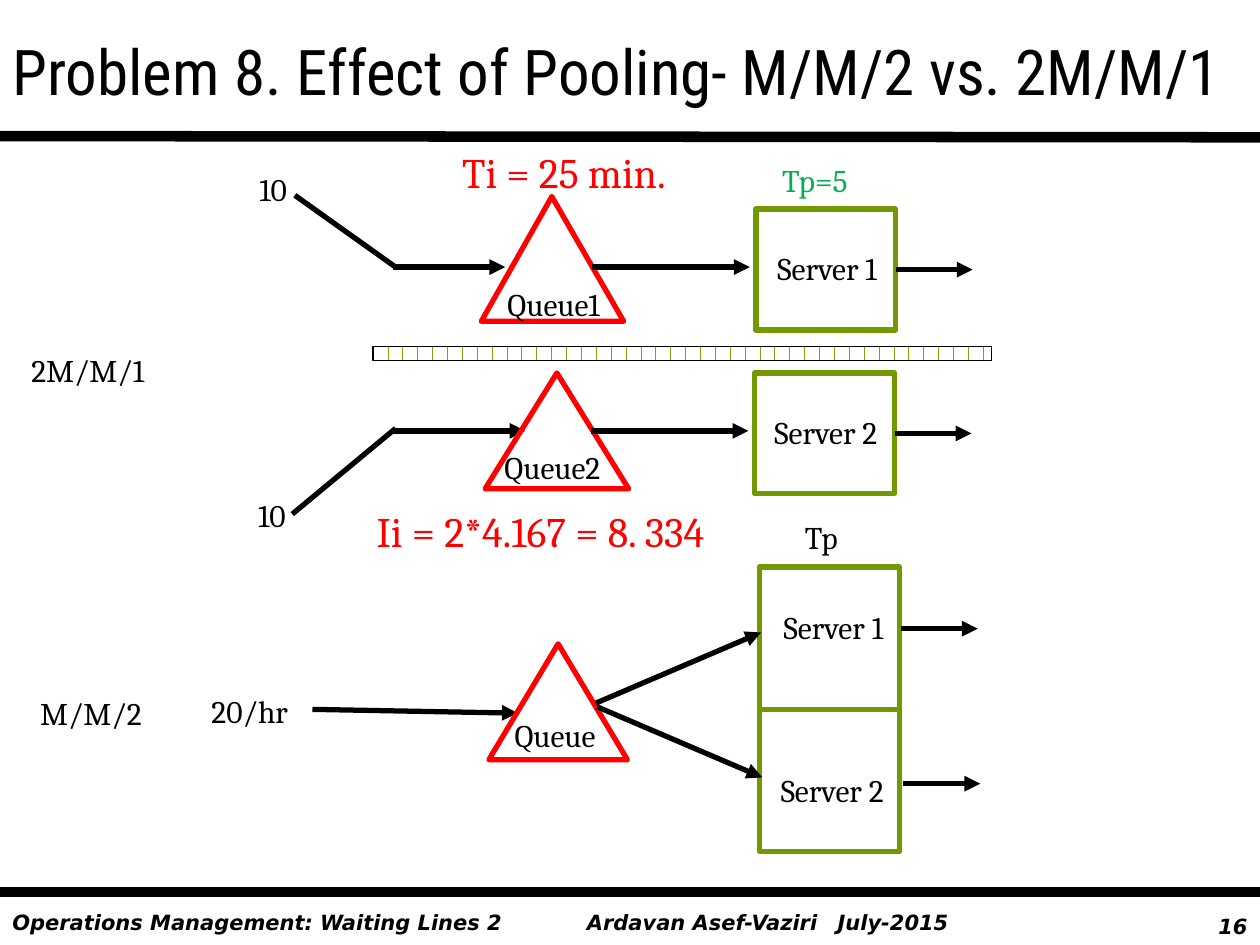
from pptx import Presentation
from pptx.dml.color import RGBColor
from pptx.enum.dml import MSO_PATTERN as Pattern
from pptx.enum.shapes import MSO_CONNECTOR as Connector, MSO_SHAPE as Shape
from pptx.enum.text import MSO_ANCHOR as Anchor, MSO_AUTO_SIZE as AutoSize, PP_ALIGN as Align
from pptx.oxml.ns import qn
from pptx.oxml.xmlchemy import OxmlElement
from pptx.util import Pt

PX = 9144  # 100 px to the inch
BLACK, RED, GREEN, OLIVE = "000000", "FF0000", "00B050", "739900"
LABEL_HEIGHT = 40


def color(value):
    return RGBColor.from_string(value)


def add_text(page, box, text, size=18, font="Cambria", fill=BLACK, bold=False,
             italic=False, align=Align.LEFT, anchor=Anchor.TOP, wrap=False,
             grow=True, spacing=None, tab=None):
    frame = page.shapes.add_textbox(*(n * PX for n in box)).text_frame
    frame.word_wrap = wrap
    frame.auto_size = AutoSize.SHAPE_TO_FIT_TEXT if grow else AutoSize.NONE
    frame.vertical_anchor = anchor
    para = frame.paragraphs[0]
    para.alignment = align
    if spacing:
        para.line_spacing = spacing
    if tab:
        stops = OxmlElement("a:tabLst")
        stop = OxmlElement("a:tab")
        stop.set("pos", str(tab * PX))
        stop.set("algn", "l")
        stops.append(stop)
        para._p.get_or_add_pPr().append(stops)
    span = para.add_run()
    span.text = text
    span.font.size = Pt(size)
    span.font.name = font
    span.font.bold = bold
    span.font.italic = italic
    span.font.color.rgb = color(fill)


def add_line(page, start, end, stroke=BLACK, width=3, arrow=False):
    line = page.shapes.add_connector(
        Connector.STRAIGHT, *(n * PX for n in (*start, *end)))
    line.line.color.rgb = color(stroke)
    line.line.width = Pt(width)
    properties = line.element.spPr
    if arrow:
        tail = OxmlElement("a:tailEnd")
        tail.set("type", "triangle")
        properties.find(qn("a:ln")).append(tail)
    properties.append(OxmlElement("a:effectLst"))
    return line


def outline(shape, stroke, width=3):
    shape.shadow.inherit = False
    shape.fill.background()
    shape.line.color.rgb = color(stroke)
    shape.line.width = Pt(width)
    return shape


def add_rect(page, box, stroke, width=3):
    rect = page.shapes.add_shape(Shape.RECTANGLE, *(n * PX for n in box))
    return outline(rect, stroke, width)


def add_queue(page, box):
    left, top, width, height = box
    bottom = top + height
    builder = page.shapes.build_freeform(left, bottom, scale=PX)
    builder.add_line_segments([(left + width // 2, top), (left + width, bottom)])
    outline(builder.convert_to_shape(), RED)


def add_label(page, left, top, width, text):
    add_text(page, (left, top, width, LABEL_HEIGHT), text, align=Align.CENTER)


def add_frame(page, width, height):
    """Title, rules and footer."""
    footer = dict(size=12, font="DejaVu Sans", bold=True, italic=True, wrap=True)
    foot = height - 33
    add_text(page, (width - 75, height - 30, 75, 30), "16", align=Align.RIGHT, **footer)
    add_text(page, (456, foot, 335, 30), "Ardavan Asef-Vaziri\tJuly-2015", tab=199, **footer)
    add_text(page, (0, foot, 467, 30), "Operations Management: Waiting Lines 2", **footer)
    add_line(page, (0, 108), (width, 109), width=6)
    add_line(page, (0, height - 42), (width, height - 42), width=6)
    add_text(page, (0, 0, width, 111), "Problem 8. Effect of Pooling- M/M/2 vs. 2M/M/1",
             size=36, font="Roboto Condensed", anchor=Anchor.MIDDLE, wrap=True, grow=False)


def add_lane(page, left, top, number, queue, inlet, source, joint, rate_top):
    """One separate line: arrivals, its own queue and its own server."""
    flow = top + 46
    # Arrivals
    add_line(page, (left + joint[0], top + joint[1]), (left + source[0], top + source[1]))
    add_text(page, (left - 116, top + rate_top, 45, LABEL_HEIGHT), "10")
    add_line(page, (left, flow), (left + inlet, flow), arrow=True)
    # Queue
    x, y, width, height = queue
    add_queue(page, (left + x, top + y, width, height))
    add_label(page, left + 74, top + 55, 107, f"Queue{number}")
    add_line(page, (left + 158, flow), (left + 283, flow), arrow=True)
    # Server
    server = add_rect(page, (left + 288, top, 111, 96), OLIVE)
    add_label(page, left + 289, top + 27, 111, f"Server {number}")
    out = add_line(page, (left + 399, top + 48), (left + 460, top + 48), arrow=True)
    out.begin_connect(server, 3)


def add_pool(page, left, top):
    """Shared line: one queue that feeds two servers."""
    # Arrivals and queue
    add_text(page, (left - 230, top + 94, 85, LABEL_HEIGHT), "20/hr")
    add_line(page, (left - 140, top + 113), (left + 23, top + 116), arrow=True)
    add_queue(page, (left, top + 61, 110, 92))
    add_label(page, left + 5, top + 113, 95, "Queue")
    # Two servers in one block
    block = add_rect(page, (left + 215, top, 111, 226), OLIVE)
    divider = add_line(page, (left + 215, top + 113), (left + 326, top + 113), OLIVE)
    divider.begin_connect(block, 1)
    divider.end_connect(block, 3)
    add_label(page, left + 218, top + 28, 111, "Server 1")
    add_label(page, left + 217, top + 157, 111, "Server 2")
    # Flows to and from the servers
    add_line(page, (left + 85, top + 108), (left + 216, top + 52), arrow=True)
    add_line(page, (left + 86, top + 111), (left + 217, top + 167), arrow=True)
    for x, y in ((327, 49), (329, 172)):
        add_line(page, (left + x, top + y), (left + x + 61, top + y), arrow=True)


def add_wall(page, box):
    """Brick wall between the separate lines."""
    wall = add_rect(page, box, BLACK, 0.75)
    wall.fill.patterned()
    wall.fill.pattern = Pattern.HORIZONTAL_BRICK
    wall.fill.fore_color.rgb = color("999900")
    wall.fill.back_color.rgb = color("FFFFFF")


def add_notes_on_flow(page):
    """System names, process times and results."""
    add_text(page, (15, 274, 146, LABEL_HEIGHT), "2M/M/1", wrap=True)
    add_text(page, (22, 546, 146, LABEL_HEIGHT), "M/M/2", wrap=True)
    add_text(page, (611, 123, 79, LABEL_HEIGHT), "Tp=5", fill=GREEN)
    add_text(page, (629, 406, 51, LABEL_HEIGHT), "Tp")
    result = dict(size=24, fill=RED, wrap=True, grow=False, spacing=0.9)
    add_text(page, (357, 116, 224, 60), "Ti = 25 min.", **result)
    add_text(page, (289, 401, 359, 44), "Ii = 2*4.167 = 8. 334", **result)


def main():
    deck = Presentation()
    width, height = 1000, 750
    deck.slide_width, deck.slide_height = width * PX, height * PX
    page = deck.slides.add_slide(deck.slide_layouts[6])
    add_frame(page, width, height)
    add_lane(page, 312, 166, 1, queue=(70, -10, 113, 99), inlet=89,
             source=(-78, -11), joint=(2, 46), rate_top=-36)
    add_wall(page, (296, 275, 491, 11))
    add_lane(page, 311, 296, 2, queue=(74, 0, 114, 92), inlet=106,
             source=(-79, 112), joint=(3, 44), rate_top=93)
    add_pool(page, 388, 450)
    add_notes_on_flow(page)
    deck.save("out.pptx")


if __name__ == "__main__":
    main()
